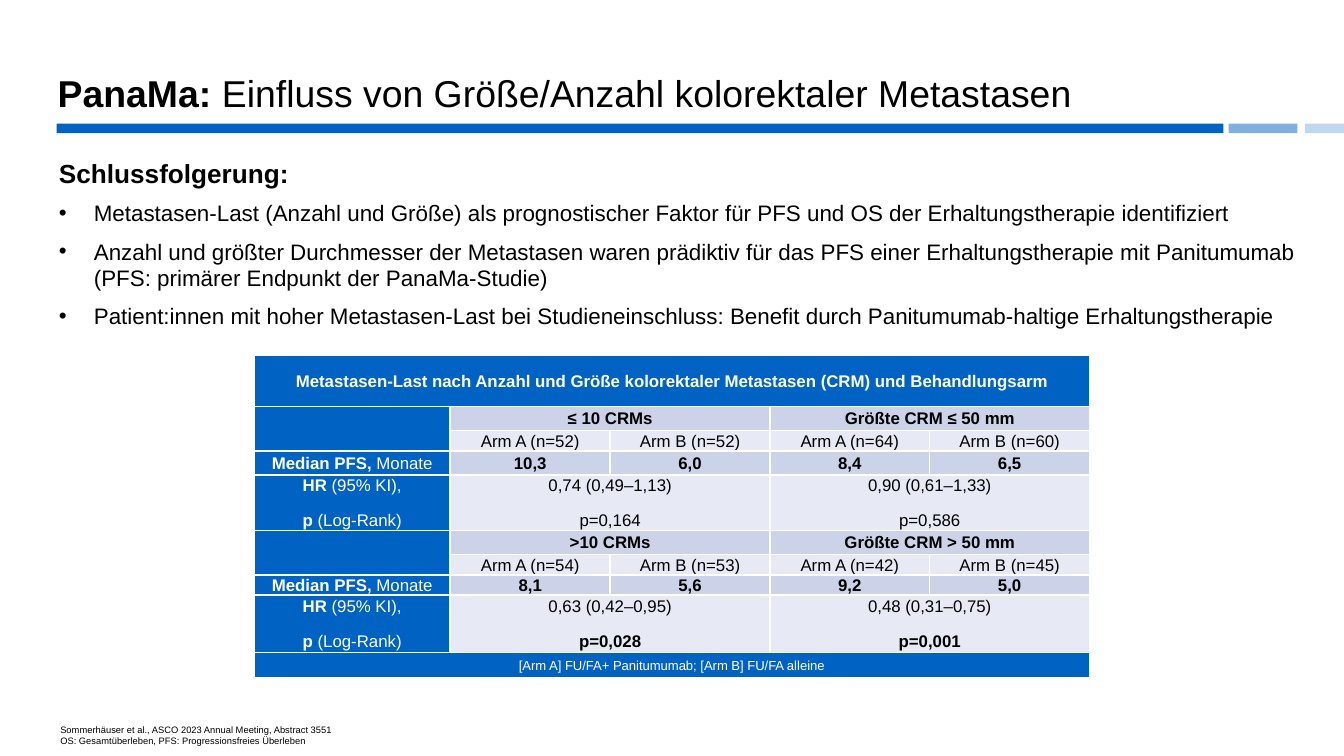
import lxml.etree
import pptx
import pptx.dml.color
import pptx.enum.shapes
import pptx.enum.text
import pptx.oxml.ns
import pptx.util

Cm = pptx.util.Cm
Pt = pptx.util.Pt
ALIGN = pptx.enum.text.PP_ALIGN
ANCHOR = pptx.enum.text.MSO_ANCHOR
qn = pptx.oxml.ns.qn

BLUE, WHITE, BLACK = "0063C3", "FFFFFF", "000000"
DARK_BAND, LIGHT_BAND = "CCD3E9", "E7EAF5"

TITLE = "PanaMa: |Einfluss von Größe/Anzahl kolorektaler Metastasen"
HEADING = "Schlussfolgerung:|"
FINDINGS = [
    "Metastasen-Last (Anzahl und Größe) als prognostischer Faktor für PFS und OS "
    "der Erhaltungstherapie identifiziert",
    "Anzahl und größter Durchmesser der Metastasen waren prädiktiv für das PFS einer "
    "Erhaltungstherapie mit Panitumumab (PFS: primärer Endpunkt der PanaMa-Studie)",
    "Patient:innen mit hoher Metastasen-Last bei Studieneinschluss: Benefit durch "
    "Panitumumab-haltige Erhaltungstherapie",
]
SOURCE = ("Sommerhäuser et al., ASCO 2023 Annual Meeting, Abstract 3551\v"
          "OS: Gesamtüberleben, PFS: Progressionsfreies Überleben")

TABLE_HEAD = ("Metastasen-Last nach Anzahl und Größe kolorektaler Metastasen (CRM) "
              "und Behandlungsarm|")
TABLE_FOOT = "[Arm A] FU/FA+ Panitumumab; [Arm B] FU/FA alleine"
# One block per metastatic load: groups, patients per arm, median PFS, HR and p
BLOCKS = [
    (["≤ 10 CRMs|", "Größte CRM ≤ 50 mm|"], [52, 52, 64, 60],
     ["10,3", "6,0", "8,4", "6,5"],
     ["0,74 (0,49–1,13)\np=0,164", "0,90 (0,61–1,33)\np=0,586"]),
    ([">10 CRMs|", "Größte CRM > 50 mm|"], [54, 53, 42, 45],
     ["8,1", "5,6", "9,2", "5,0"],
     ["0,63 (0,42–0,95)\np=0,028|", "0,48 (0,31–0,75)\np=0,001|"]),
]
COL_WIDTHS = [3.71] + [3.02] * 4
ROW_HEIGHTS = [0.97, 0.46, 0.38, 0.46, 1.02, 0.46, 0.38, 0.38, 1.09, 0.48]


def rgb(value):
    return pptx.dml.color.RGBColor.from_string(value)


def write(p, text, size, color=BLACK):
    """Fill a paragraph; the part before a bar is bold."""
    p.font.name, p.font.size, p.font.color.rgb = "Arial", Pt(size), rgb(color)
    head, bar, tail = text.partition("|")
    for part, bold in ((head, bool(bar)), (tail, False)):
        if part:
            r = p.add_run()
            r.text, r.font.bold = part, bold


def place(s, left, top, width, height):
    s.left, s.top, s.width, s.height = Cm(left), Cm(top), Cm(width), Cm(height)


def add_title(slide, *box):
    s = slide.shapes.title
    place(s, *box)
    tf = s.text_frame
    tf.auto_size = pptx.enum.text.MSO_AUTO_SIZE.NONE
    tf.vertical_anchor = ANCHOR.BOTTOM
    tf.margin_left = tf.margin_right = tf.margin_top = 0
    p = tf.paragraphs[0]
    p.alignment, p.line_spacing = ALIGN.LEFT, 0.9
    write(p, TITLE, 20)


def add_rule(slide, left, top, width, height):
    """Draw the divider as three segments that fade towards the right."""
    for offset, length, alpha in ((0, 22.05, 100), (22.15, 1.3, 50), (23.59, 0.74, 25)):
        s = slide.shapes.add_shape(
            pptx.enum.shapes.MSO_SHAPE.RECTANGLE, Cm(left + offset), Cm(top),
            Cm(min(length, width - offset)), Cm(height))
        s.shadow.inherit = False
        s.line.fill.background()
        s.fill.solid()
        s.fill.fore_color.rgb = rgb(BLUE)
        if alpha < 100:
            color = s.fill._xPr.find(qn("a:solidFill"))[0]
            lxml.etree.SubElement(color, qn("a:alpha"), val=str(alpha * 1000))


def set_bullet(p, char=None):
    pPr = p._p.get_or_add_pPr()
    indent = Cm(0.66) if char else 0
    pPr.set("marL", str(indent))
    pPr.set("indent", str(-indent))
    bullet = pPr.makeelement(qn("a:buChar" if char else "a:buNone"), {})
    if char:
        bullet.set("char", char)
    pPr.insert_element_before(bullet, "a:tabLst", "a:defRPr", "a:extLst")


def add_conclusions(slide, *box):
    s = slide.placeholders[1]
    place(s, *box)
    tf = s.text_frame
    tf.auto_size = pptx.enum.text.MSO_AUTO_SIZE.NONE
    for i, text in enumerate([HEADING] + FINDINGS):
        p = tf.add_paragraph() if i else tf.paragraphs[0]
        p.line_spacing, p.space_before = 1.0, Pt(6 if i else 0)
        set_bullet(p, "•" if i else None)
        write(p, text, 12 if i else 14)


def fill_cell(cell, text, fill, color=BLACK, size=9):
    cell.fill.solid()
    cell.fill.fore_color.rgb = rgb(fill)
    cell.vertical_anchor = ANCHOR.MIDDLE
    cell.margin_left = cell.margin_right = Cm(0.18)
    cell.margin_top = cell.margin_bottom = 0
    tf = cell.text_frame
    for i, line in enumerate(text.split("\n")):
        p = tf.add_paragraph() if i else tf.paragraphs[0]
        p.alignment, p.line_spacing, p.space_after = ALIGN.CENTER, 1.07, Pt(8)
        write(p, line, size, color)


def fill_block(table, top, groups, patients, medians, hazards):
    labels = ["", "", "Median PFS, |Monate", "HR |(95% KI),\np |(Log-Rank)"]
    for i, label in enumerate(labels):
        fill_cell(table.cell(top + i, 0), label, BLUE, WHITE)
    table.cell(top, 0).merge(table.cell(top + 1, 0))
    for i, (n, median) in enumerate(zip(patients, medians)):
        fill_cell(table.cell(top + 1, i + 1), f"Arm {'AB'[i % 2]} (n={n})", LIGHT_BAND)
        fill_cell(table.cell(top + 2, i + 1), median + "|", DARK_BAND)
    for row, texts, fill in ((top, groups, DARK_BAND), (top + 3, hazards, LIGHT_BAND)):
        for col, text in zip((1, 3), texts):
            fill_cell(table.cell(row, col), text, fill)
            fill_cell(table.cell(row, col + 1), "", fill)
            table.cell(row, col).merge(table.cell(row, col + 1))


def add_results_table(slide, left, top):
    table = slide.shapes.add_table(
        len(ROW_HEIGHTS), len(COL_WIDTHS), Cm(left), Cm(top),
        Cm(sum(COL_WIDTHS)), Cm(sum(ROW_HEIGHTS))).table
    table.horz_banding = False
    for col, width in zip(table.columns, COL_WIDTHS):
        col.width = Cm(width)
    for row, height in zip(table.rows, ROW_HEIGHTS):
        row.height = Cm(height)
    last = len(ROW_HEIGHTS) - 1
    for row, text, size in ((0, TABLE_HEAD, 9), (last, TABLE_FOOT, 7)):
        for col in range(len(COL_WIDTHS)):
            fill_cell(table.cell(row, col), "" if col else text, BLUE, WHITE, size)
        table.cell(row, 0).merge(table.cell(row, len(COL_WIDTHS) - 1))
    for i, block in enumerate(BLOCKS):
        fill_block(table, 1 + 4 * i, *block)


def add_source(slide, left, top, width, height):
    s = slide.shapes.add_textbox(Cm(left), Cm(top), Cm(width), Cm(height))
    s.text_frame.word_wrap = True
    p = s.text_frame.paragraphs[0]
    p.text = SOURCE
    p.font.name, p.font.size, p.font.color.rgb = "Arial", Pt(5), rgb(BLACK)


def main():
    prs = pptx.Presentation()
    prs.slide_width, prs.slide_height = Cm(25.4), Cm(14.29)
    slide = prs.slides.add_slide(prs.slide_layouts[1])
    add_rule(slide, 1.07, 2.34, 24.33, 0.18)
    add_results_table(slide, 4.8, 6.71)
    add_title(slide, 1.09, 1.04, 23.42, 1.27)
    add_conclusions(slide, 0.86, 2.84, 24.1, 3.58)
    add_source(slide, 0.89, 13.56, 12.7, 0.7)
    prs.save("out.pptx")


if __name__ == "__main__":
    main()
